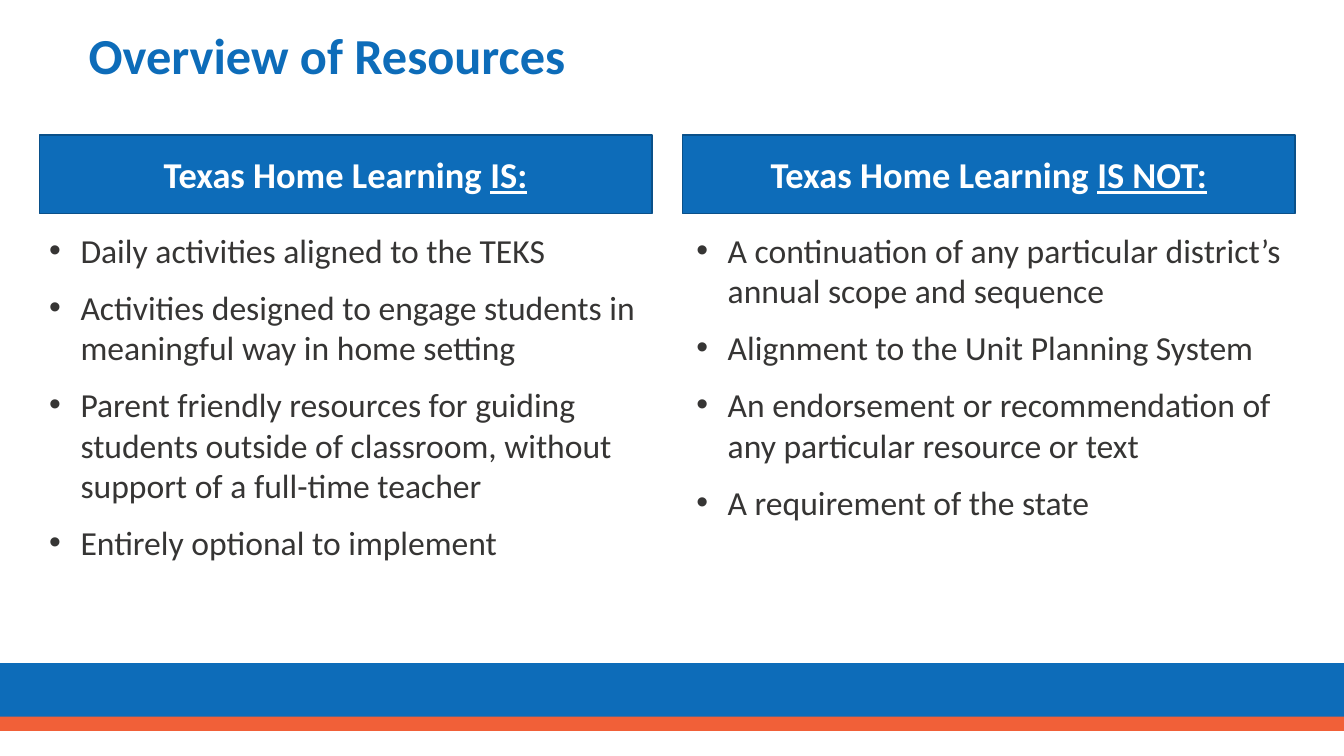
from lxml import etree
from pptx import Presentation
from pptx.dml.color import RGBColor
from pptx.enum.shapes import MSO_SHAPE
from pptx.enum.text import MSO_ANCHOR, MSO_AUTO_SIZE, PP_ALIGN
from pptx.oxml.ns import qn
from pptx.util import Cm, Pt

RECTANGLE, ROUNDED = MSO_SHAPE.RECTANGLE, MSO_SHAPE.ROUNDED_RECTANGLE
MIDDLE = MSO_ANCHOR.MIDDLE
LEFT, CENTER = PP_ALIGN.LEFT, PP_ALIGN.CENTER
NO_AUTOFIT = MSO_AUTO_SIZE.NONE

COLORS = {"blue": "0D6CB9", "navy": "0A5089", "orange": "F16038",
          "text": "363534", "white": "FFFFFF"}
TITLE_ONLY = 5
COLUMN_WIDTH = Cm(15.44)
INDENT = Cm(0.79)

# header left, body left, body height, emphasised words, bullets
COLUMNS = [
    (0.99, 0.99, 9.47, "IS:", [
        "Daily activities aligned to the TEKS",
        "Activities designed to engage students in meaningful way in home setting",
        "Parent friendly resources for guiding students outside of classroom, "
        "without support of a full-time teacher",
        "Entirely optional to implement",
    ]),
    (17.2, 17.3, 8.08, "IS NOT:", [
        "A continuation of any particular district’s annual scope and sequence",
        "Alignment to the Unit Planning System",
        "An endorsement or recommendation of any particular resource or text",
        "A requirement of the state",
    ]),
]


def color(name):
    return RGBColor.from_string(COLORS[name])


def style_font(font, size, name, bold=False):
    font.name = "Calibri"
    font.size = Pt(size)
    font.bold = bold
    font.color.rgb = color(name)


deck = Presentation()
deck.slide_width = Cm(33.87)
deck.slide_height = Cm(19.05)
page = deck.slides.add_slide(deck.slide_layouts[TITLE_ONLY])

# Footer bands
for top, height, fill in [(16.71, 1.47, "blue"), (18.06, 0.36, "orange")]:
    band = page.shapes.add_shape(RECTANGLE, 0, Cm(top), deck.slide_width, Cm(height))
    band.shadow.inherit = False
    band.fill.solid()
    band.fill.fore_color.rgb = color(fill)
    band.line.fill.background()

# Title
title = page.shapes.title
title.left, title.top, title.width, title.height = Cm(1.98), Cm(0.43), Cm(30.89), Cm(2.08)
title.text_frame.text = "Overview of Resources"
title.text_frame.auto_size = NO_AUTOFIT
title.text_frame.vertical_anchor = MIDDLE
para = title.text_frame.paragraphs[0]
para.alignment = LEFT
para.line_spacing = 0.9
style_font(para.runs[0].font, 36, "blue", bold=True)

# Two columns, each a header above a bulleted list
for header_left, body_left, body_height, emphasis, bullets in COLUMNS:
    header = page.shapes.add_shape(ROUNDED, Cm(header_left), Cm(3.4), COLUMN_WIDTH, Cm(1.98))
    header.adjustments[0] = 0
    header.shadow.inherit = False
    header.fill.solid()
    header.fill.fore_color.rgb = color("blue")
    header.line.color.rgb = color("navy")
    header.line.width = Pt(1)
    header.text_frame.vertical_anchor = MIDDLE
    para = header.text_frame.paragraphs[0]
    para.alignment = CENTER
    for words, underlined in [("Texas Home Learning ", False), (emphasis, True)]:
        span = para.add_run()
        span.text = words
        style_font(span.font, 26, "white", bold=True)
        span.font.underline = underlined

    body = page.shapes.add_textbox(Cm(body_left), Cm(5.66), COLUMN_WIDTH, Cm(body_height))
    frame = body.text_frame
    frame.word_wrap = True
    frame.text = "\n".join(bullets)
    for para in frame.paragraphs:
        para.space_after = Pt(12)
        properties = para._p.get_or_add_pPr()
        properties.set("marL", str(INDENT))
        properties.set("indent", str(-INDENT))
        etree.SubElement(properties, qn("a:buFont"), typeface="Arial")
        etree.SubElement(properties, qn("a:buChar"), char="•")
        style_font(para.runs[0].font, 24, "text")

deck.save("out.pptx")
